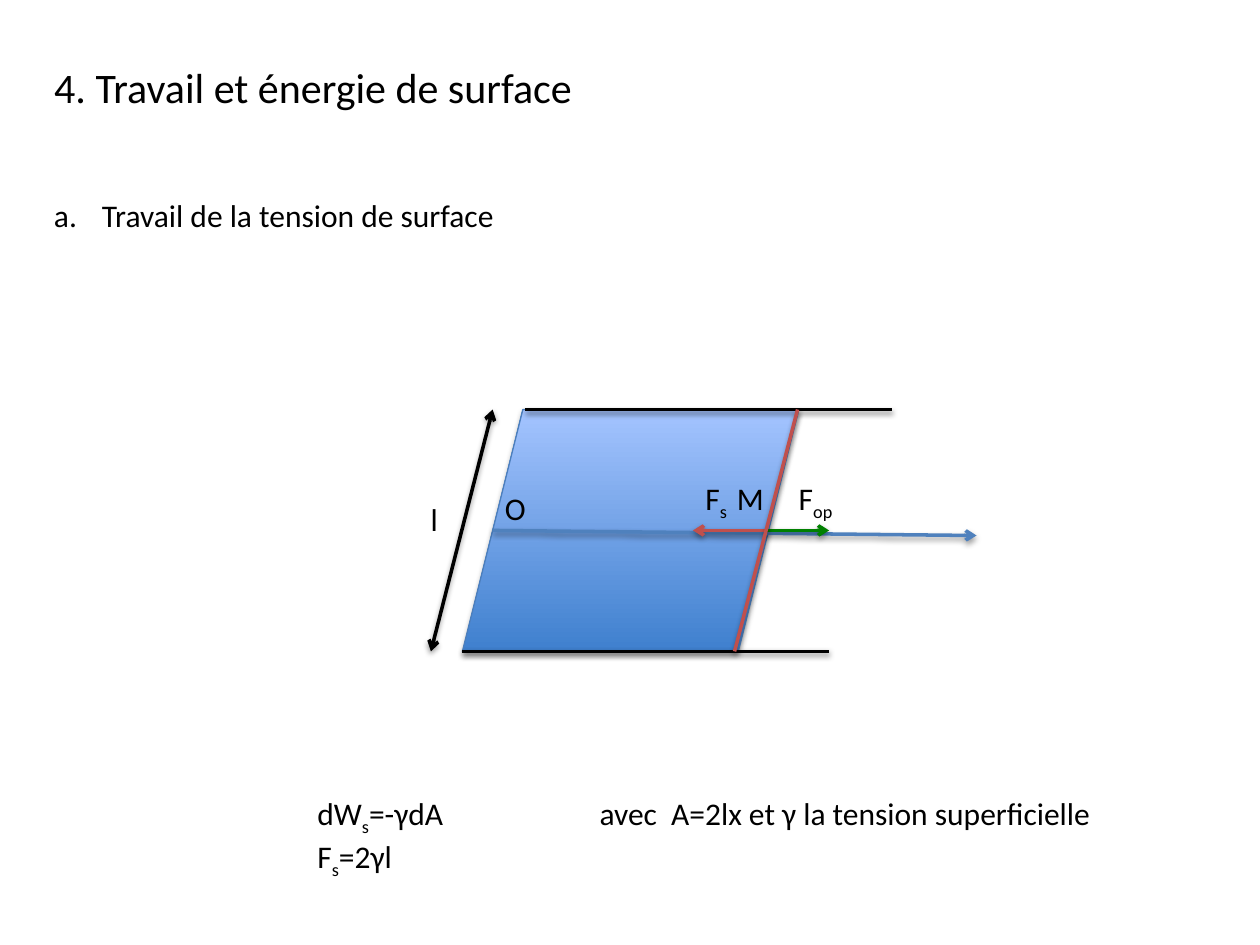
from lxml import etree
from pptx import Presentation
from pptx.dml.color import RGBColor
from pptx.enum.shapes import MSO_CONNECTOR, MSO_SHAPE
from pptx.enum.text import MSO_ANCHOR, MSO_AUTO_SIZE, PP_ALIGN
from pptx.oxml import parse_xml
from pptx.oxml.ns import nsdecls, qn
from pptx.util import Inches, Pt

STRAIGHT = MSO_CONNECTOR.STRAIGHT
PARALLELOGRAM = MSO_SHAPE.PARALLELOGRAM
TOP = MSO_ANCHOR.TOP
GROW = MSO_AUTO_SIZE.SHAPE_TO_FIT_TEXT
LEFT = PP_ALIGN.LEFT

THEME = {
    "font": "Calibri", "title": 24, "body": 18,
    "black": "000000", "blue": "4F81BD", "green": "008000", "red": "C0504D",
    "film_low": "3F80CE", "film_high": "A4C4FF", "film_edge": "4B7EBC",
}

TITLE = "4. Travail et énergie de surface"
SUBTITLE = "Travail de la tension de surface"

# A paragraph is a list of (text, is_subscript) runs.
FORMULAS = [
    [("dW", False), ("s", True),
     ("=-γdA\tavec  A=2lx et γ la tension superficielle", False)],
    [("F", False), ("s", True), ("=2γl", False)],
]
LABELS = [  # left, top, width, runs
    (5.5, 3.75, 0.59, [("F", False), ("s", True)]),
    (6.24, 3.75, 0.59, [("F", False), ("op", True)]),
    (3.91, 3.83, 0.26, [("O", False)]),
    (5.75, 3.75, 0.26, [("M", False)]),
    (3.32, 3.92, 0.26, [("l", False)]),
]

FILM_LEFT, FILM_TOP, FILM_WIDTH, FILM_HEIGHT = 3.67, 3.25, 2.67, 1.92
FILM_BOTTOM = FILM_TOP + FILM_HEIGHT
MIDDLE = FILM_TOP + FILM_HEIGHT / 2
RAIL_LENGTH = 2.91
BAR_MIDDLE = 6.09

LINES = [  # start, end, colour, ends that carry an arrowhead
    ((4.17, FILM_TOP), (4.17 + RAIL_LENGTH, FILM_TOP), "black", ()),
    ((FILM_LEFT, FILM_BOTTOM), (FILM_LEFT + RAIL_LENGTH, FILM_BOTTOM), "black", ()),
    ((3.91, MIDDLE), (7.75, 4.25), "blue", ("tailEnd",)),
    ((BAR_MIDDLE, MIDDLE), (6.58, MIDDLE), "green", ("tailEnd",)),
    ((BAR_MIDDLE, MIDDLE), (5.5, MIDDLE), "red", ("tailEnd",)),
    ((3.91, FILM_TOP), (3.42, FILM_BOTTOM), "black", ("headEnd", "tailEnd")),
    ((6.33, FILM_TOP), (5.83, FILM_BOTTOM), "red", ()),
]


def color(name):
    return RGBColor.from_string(THEME[name])


def add_shadow(shape, distance, opacity):
    shape._element.spPr.append(parse_xml(
        f'<a:effectLst {nsdecls("a")}><a:outerShdw blurRad="{Pt(3.1)}" '
        f'dist="{Pt(distance)}" dir="5400000" rotWithShape="0">'
        f'<a:srgbClr val="{THEME["black"]}"><a:alpha val="{opacity * 1000}"/>'
        '</a:srgbClr></a:outerShdw></a:effectLst>'))


def write(shape, paragraphs, size="body"):
    frame = shape.text_frame
    frame.word_wrap = True
    frame.auto_size = GROW
    frame.vertical_anchor = TOP
    for index, runs in enumerate(paragraphs):
        paragraph = frame.add_paragraph() if index else frame.paragraphs[0]
        paragraph.alignment = LEFT
        for text, is_subscript in runs:
            run = paragraph.add_run()
            run.text = text
            run.font.name = THEME["font"]
            run.font.size = Pt(THEME[size])
            run.font.color.rgb = color("black")
            if is_subscript:
                run.font._element.set("baseline", "-25000")


def add_text(slide, left, top, width, height, paragraphs):
    box = slide.shapes.add_textbox(*map(Inches, (left, top, width, height)))
    write(box, paragraphs)
    return box.text_frame.paragraphs


def add_film(slide):
    film = slide.shapes.add_shape(PARALLELOGRAM, *map(
        Inches, (FILM_LEFT, FILM_TOP, FILM_WIDTH, FILM_HEIGHT)))
    film.fill.gradient()
    film.fill.gradient_angle = 90
    for stop, name in zip(film.fill.gradient_stops, ("film_low", "film_high")):
        stop.color.rgb = color(name)
    film.line.color.rgb = color("film_edge")
    film.line.width = Pt(0.75)
    add_shadow(film, 1.8, 35)


def add_line(slide, start, end, name, arrow_ends):
    line = slide.shapes.add_connector(STRAIGHT, *map(Inches, start + end))
    line.line.color.rgb = color(name)
    line.line.width = Pt(2)
    for arrow_end in arrow_ends:
        etree.SubElement(line.line._get_or_add_ln(), qn(f"a:{arrow_end}"), type="arrow")
    add_shadow(line, 1.6, 38)


def main():
    presentation = Presentation()
    presentation.slide_width = Inches(10)
    presentation.slide_height = Inches(7.5)
    slide = presentation.slides.add_slide(presentation.slide_layouts[5])

    title = slide.shapes.title
    title.left, title.top, title.width, title.height = map(Inches, (0.33, 0.44, 9.42, 0.5))
    write(title, [[(TITLE, False)]], "title")

    subtitle = add_text(slide, 0.33, 1.51, 9.42, 0.4, [[(SUBTITLE, False)]])[0]
    properties = subtitle._p.get_or_add_pPr()
    properties.set("marL", str(Inches(0.38)))
    properties.set("indent", str(Inches(-0.38)))
    etree.SubElement(properties, qn("a:buAutoNum"), type="alphaLcPeriod")

    add_film(slide)
    for line in LINES:
        add_line(slide, *line)
    for left, top, width, runs in LABELS:
        add_text(slide, left, top, width, 0.4, [runs])

    formula = add_text(slide, 2.42, 6.25, 7.33, 0.71, FORMULAS)[0]
    tabs = etree.SubElement(formula._p.get_or_add_pPr(), qn("a:tabLst"))
    etree.SubElement(tabs, qn("a:tab"), pos=str(Inches(2.24)), algn="l")

    presentation.save("out.pptx")


if __name__ == "__main__":
    main()
